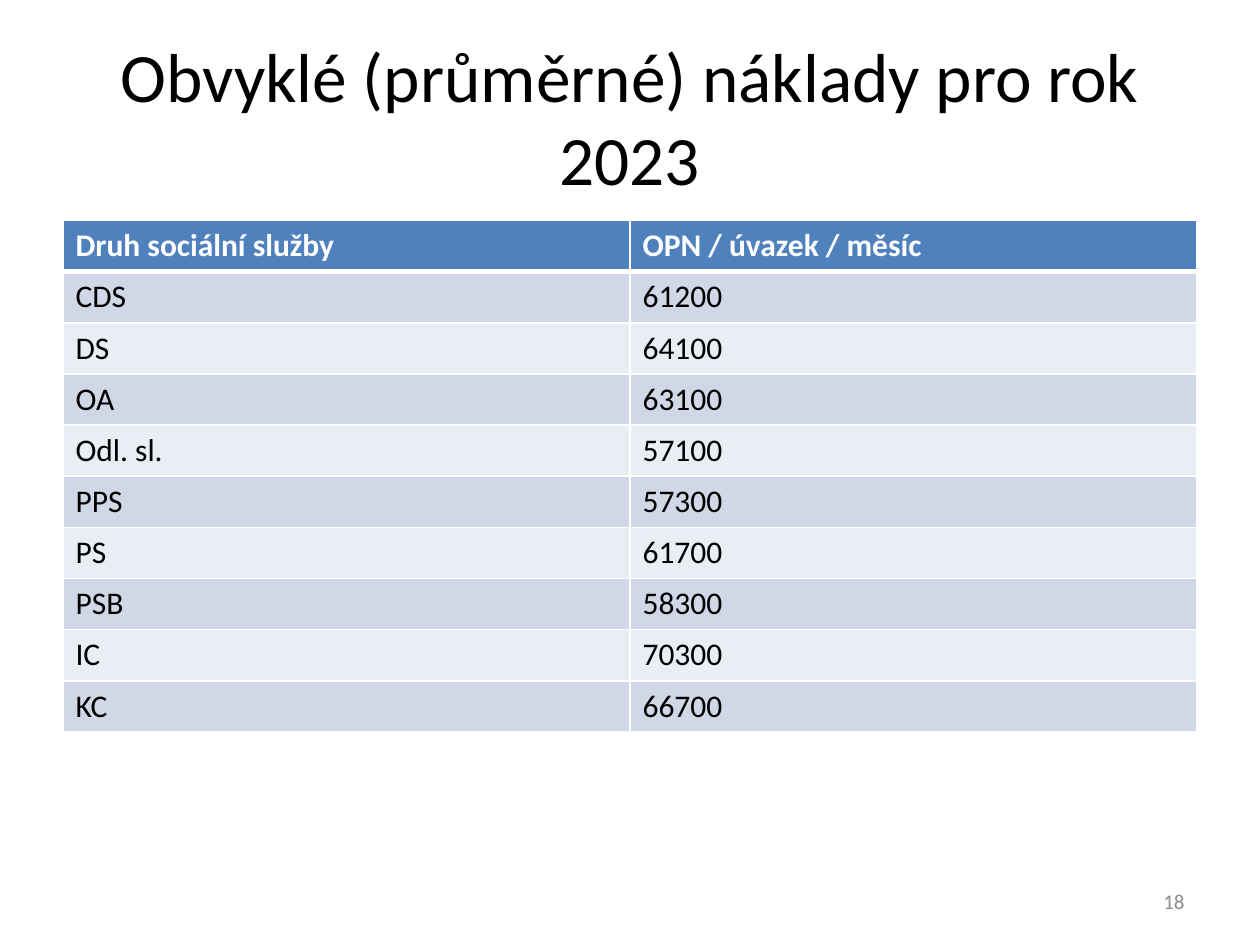
from dataclasses import dataclass

from lxml.etree import SubElement
from pptx import Presentation
from pptx.dml.color import RGBColor
from pptx.enum.text import MSO_ANCHOR, PP_ALIGN
from pptx.oxml.ns import qn
from pptx.util import Inches, Pt

FONT = "Calibri"
WHITE = "FFFFFF"
BLACK = "000000"
HEADER_FILL = "4F81BD"
BAND_FILLS = ("D0D8E8", "E9EDF4")
ROW_HEIGHT = 0.406


@dataclass(frozen=True)
class Label:
    text: str
    left: float
    top: float
    width: float
    height: float
    size: float
    color: str
    align: PP_ALIGN


@dataclass(frozen=True)
class ServiceCost:
    service: str
    cost: str


LABELS = (
    Label("Obvyklé (průměrné) náklady pro rok 2023", 0.5, 0.3, 9, 1.25, 39.6, BLACK, PP_ALIGN.CENTER),
    Label("18", 7.17, 6.95, 2.33, 0.4, 12, "8C8C8C", PP_ALIGN.RIGHT),
)
COSTS = (
    ServiceCost("Druh sociální služby", "OPN / úvazek / měsíc"),
    ServiceCost("CDS", "61200"),
    ServiceCost("DS", "64100"),
    ServiceCost("OA", "63100"),
    ServiceCost("Odl. sl.", "57100"),
    ServiceCost("PPS", "57300"),
    ServiceCost("PS", "61700"),
    ServiceCost("PSB", "58300"),
    ServiceCost("IC", "70300"),
    ServiceCost("KC", "66700"),
)


def rgb(color: str) -> RGBColor:
    return RGBColor.from_string(color)


def format_text(para, size: float, color: str, bold: bool = False) -> None:
    for span in para.runs:
        span.font.name = FONT
        span.font.size = Pt(size)
        span.font.bold = bold
        span.font.color.rgb = rgb(color)


def add_label(page, label: Label) -> None:
    box = page.shapes.add_textbox(
        Inches(label.left), Inches(label.top), Inches(label.width), Inches(label.height)
    )
    frame = box.text_frame
    frame.text = label.text
    frame.word_wrap = True
    frame.vertical_anchor = MSO_ANCHOR.MIDDLE
    para = frame.paragraphs[0]
    para.alignment = label.align
    format_text(para, label.size, label.color)


def add_borders(cell, top: float, bottom: float) -> None:
    properties = cell._tc.get_or_add_tcPr()
    widths = {"a:lnL": 1, "a:lnR": 1, "a:lnT": top, "a:lnB": bottom}
    for tag, width in widths.items():
        line = SubElement(properties, qn(tag), w=str(Pt(width)))
        fill = SubElement(line, qn("a:solidFill"))
        SubElement(fill, qn("a:srgbClr"), val=WHITE)


def fill_cell(cell, text: str, row: int) -> None:
    is_header = row == 0
    cell.text_frame.text = text
    format_text(cell.text_frame.paragraphs[0], 18, WHITE if is_header else BLACK, is_header)
    add_borders(cell, top=3 if row == 1 else 1, bottom=3 if is_header else 1)
    cell.fill.solid()
    cell.fill.fore_color.rgb = rgb(HEADER_FILL if is_header else BAND_FILLS[(row - 1) % 2])


def add_cost_table(page, costs: tuple[ServiceCost, ...]) -> None:
    table = page.shapes.add_table(
        len(costs), 2, Inches(0.5), Inches(1.75), Inches(9), Inches(ROW_HEIGHT * len(costs))
    ).table
    for row, entry in enumerate(costs):
        for column, text in enumerate((entry.service, entry.cost)):
            fill_cell(table.cell(row, column), text, row)


def main() -> None:
    deck = Presentation()
    deck.slide_width = Inches(10)
    deck.slide_height = Inches(7.5)
    page = deck.slides.add_slide(deck.slide_layouts[6])
    for label in LABELS:
        add_label(page, label)
    add_cost_table(page, COSTS)
    deck.save("out.pptx")


if __name__ == "__main__":
    main()
